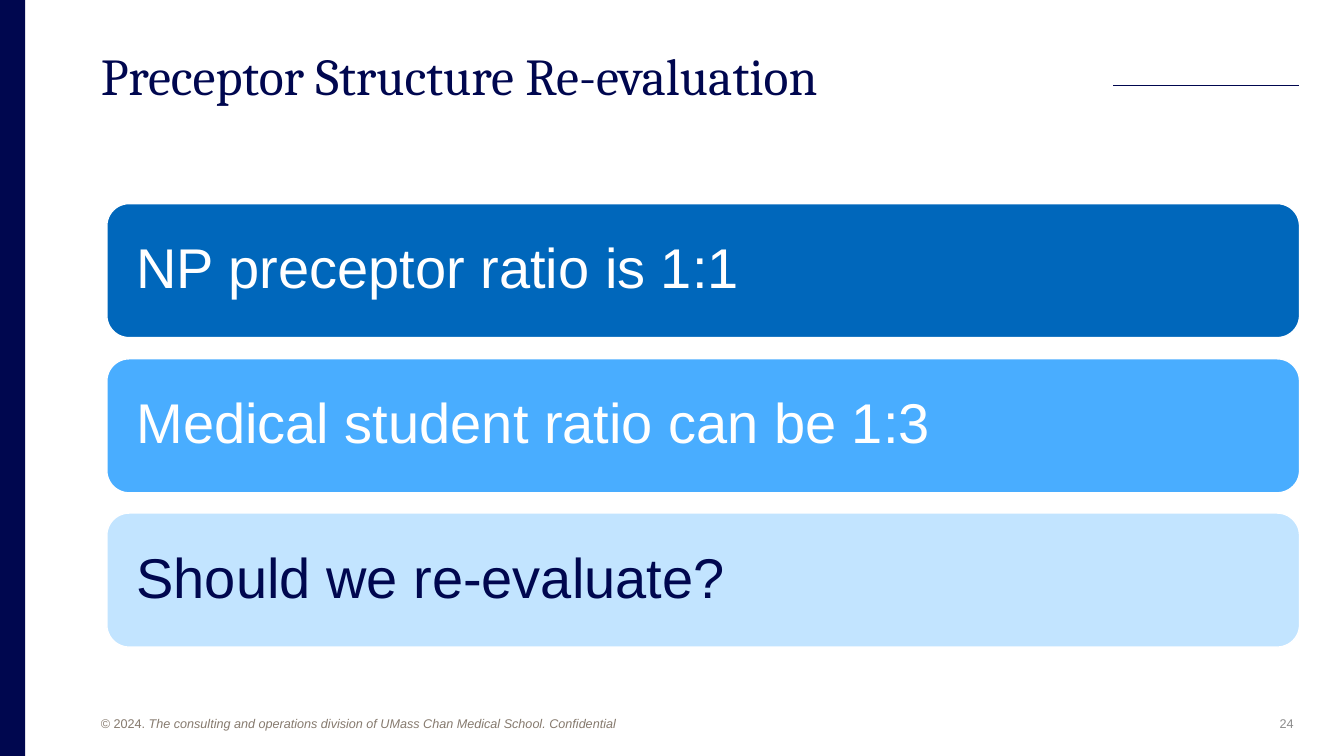
from dataclasses import dataclass

from lxml.etree import SubElement
from pptx import Presentation
from pptx.dml.color import RGBColor
from pptx.enum.shapes import MSO_CONNECTOR as Connector, MSO_SHAPE as Shape
from pptx.enum.text import MSO_ANCHOR as Anchor, PP_ALIGN as Align
from pptx.oxml.ns import qn
from pptx.slide import Slide
from pptx.text.text import TextFrame
from pptx.util import Emu, Pt

NAVY = RGBColor(0x00, 0x07, 0x4F)
BLUE = RGBColor(0x00, 0x67, 0xBB)
SKY = RGBColor(0x49, 0xAD, 0xFF)
PALE = RGBColor(0xC2, 0xE4, 0xFF)
WHITE = RGBColor(0xFF, 0xFF, 0xFF)
TAUPE = RGBColor(0x86, 0x7A, 0x6E)
GRAY = RGBColor(0x8C, 0x8C, 0x8C)

SLIDE_WIDTH, SLIDE_HEIGHT = 1333, 750
CARD_LEFT, CARD_TOP, CARD_WIDTH, CARD_HEIGHT = 106, 202, 1183, 133
CARD_PITCH = 307 / 2
CARD_INSET = 23


def px(length: int) -> Emu:
    return Emu(length * 9144)


@dataclass(frozen=True)
class Box:
    left: int
    top: int
    width: int
    height: int

    def emu(self) -> tuple[Emu, Emu, Emu, Emu]:
        return px(self.left), px(self.top), px(self.width), px(self.height)


@dataclass(frozen=True)
class Label:
    box: Box
    text: str
    size: int
    color: RGBColor
    font: str = "Arial"
    anchor: Anchor = Anchor.BOTTOM
    align: Align = Align.LEFT
    spacing: float = 1.0
    italic_tail: str = ""


@dataclass(frozen=True)
class Card:
    text: str
    fill: RGBColor
    color: RGBColor


LABELS = [
    Label(Box(100, 50, 930, 73), "Preceptor Structure Re-evaluation", 37, NAVY,
          font="Cambria", anchor=Anchor.TOP, spacing=0.9),
    Label(Box(100, 700, 617, 25), "© 2024. ", 9, TAUPE, spacing=1.5,
          italic_tail="The consulting and operations division of UMass Chan "
                      "Medical School. Confidential"),
    Label(Box(1233, 701, 50, 24), "24", 9, GRAY, align=Align.RIGHT),
]

CARDS = [
    Card("NP preceptor ratio is 1:1", BLUE, WHITE),
    Card("Medical student ratio can be 1:3", SKY, WHITE),
    Card("Should we re-evaluate?", PALE, NAVY),
]


def set_frame(frame: TextFrame, anchor: Anchor, side_inset: int = 0) -> None:
    frame.word_wrap = True
    frame.vertical_anchor = anchor
    frame.margin_left = frame.margin_right = px(side_inset)
    frame.margin_top = frame.margin_bottom = 0


def add_side_bar(slide: Slide) -> None:
    bar = slide.shapes.add_shape(Shape.RECTANGLE, *Box(0, 0, 25, SLIDE_HEIGHT).emu())
    bar.shadow.inherit = False
    bar.fill.solid()
    bar.fill.fore_color.rgb = NAVY
    bar.line.fill.background()


def add_title_rule(slide: Slide) -> None:
    rule = slide.shapes.add_connector(
        Connector.STRAIGHT, px(1104), px(85), px(1288), px(85))
    rule.line.color.rgb = NAVY
    rule.line.width = Pt(0.5)
    SubElement(rule._element.spPr, qn("a:effectLst"))


def add_label(slide: Slide, label: Label) -> None:
    frame = slide.shapes.add_textbox(*label.box.emu()).text_frame
    set_frame(frame, label.anchor)
    frame.text = label.text
    paragraph = frame.paragraphs[0]
    paragraph.alignment = label.align
    paragraph.line_spacing = label.spacing
    if label.italic_tail:
        tail = paragraph.add_run()
        tail.text = label.italic_tail
        tail.font.italic = True
    for run in paragraph.runs:
        run.font.name = label.font
        run.font.size = Pt(label.size)
        run.font.color.rgb = label.color


def add_card(slide: Slide, card: Card, row: int) -> None:
    box = Box(CARD_LEFT, CARD_TOP + round(row * CARD_PITCH), CARD_WIDTH, CARD_HEIGHT)
    panel = slide.shapes.add_shape(Shape.ROUNDED_RECTANGLE, *box.emu())
    panel.shadow.inherit = False
    panel.fill.solid()
    panel.fill.fore_color.rgb = card.fill
    panel.line.color.rgb = WHITE
    panel.line.width = Pt(1)
    frame = panel.text_frame
    set_frame(frame, Anchor.MIDDLE, CARD_INSET)
    frame.text = card.text
    paragraph = frame.paragraphs[0]
    paragraph.alignment = Align.LEFT
    paragraph.line_spacing = 0.9
    font = paragraph.runs[0].font
    font.name = "Arial"
    font.size = Pt(40)
    font.color.rgb = card.color


def main() -> None:
    deck = Presentation()
    deck.slide_width, deck.slide_height = px(SLIDE_WIDTH), px(SLIDE_HEIGHT)
    slide = deck.slides.add_slide(deck.slide_layouts[6])
    add_side_bar(slide)
    add_title_rule(slide)
    for label in LABELS:
        add_label(slide, label)
    for row, card in enumerate(CARDS):
        add_card(slide, card, row)
    deck.save("out.pptx")


if __name__ == "__main__":
    main()
